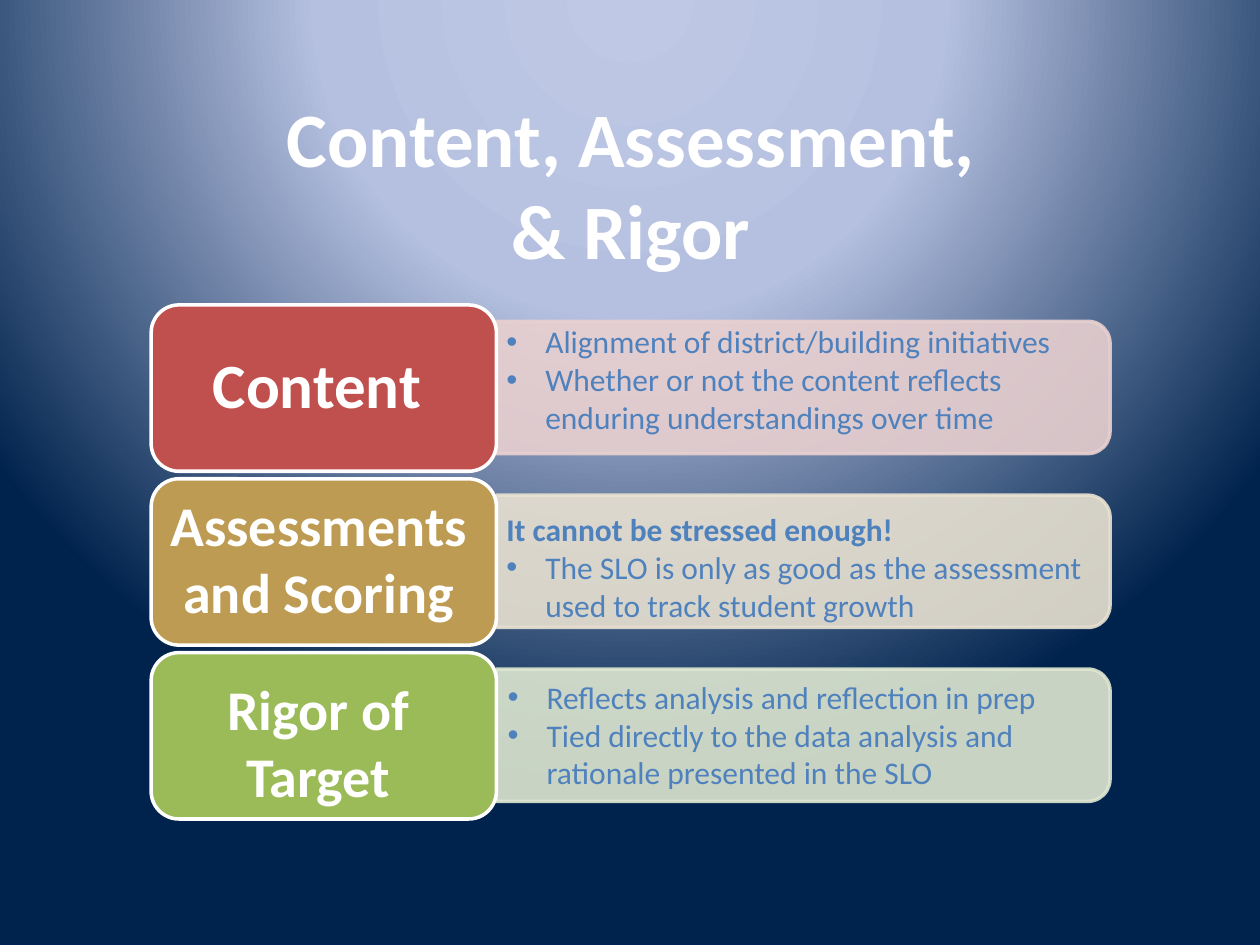
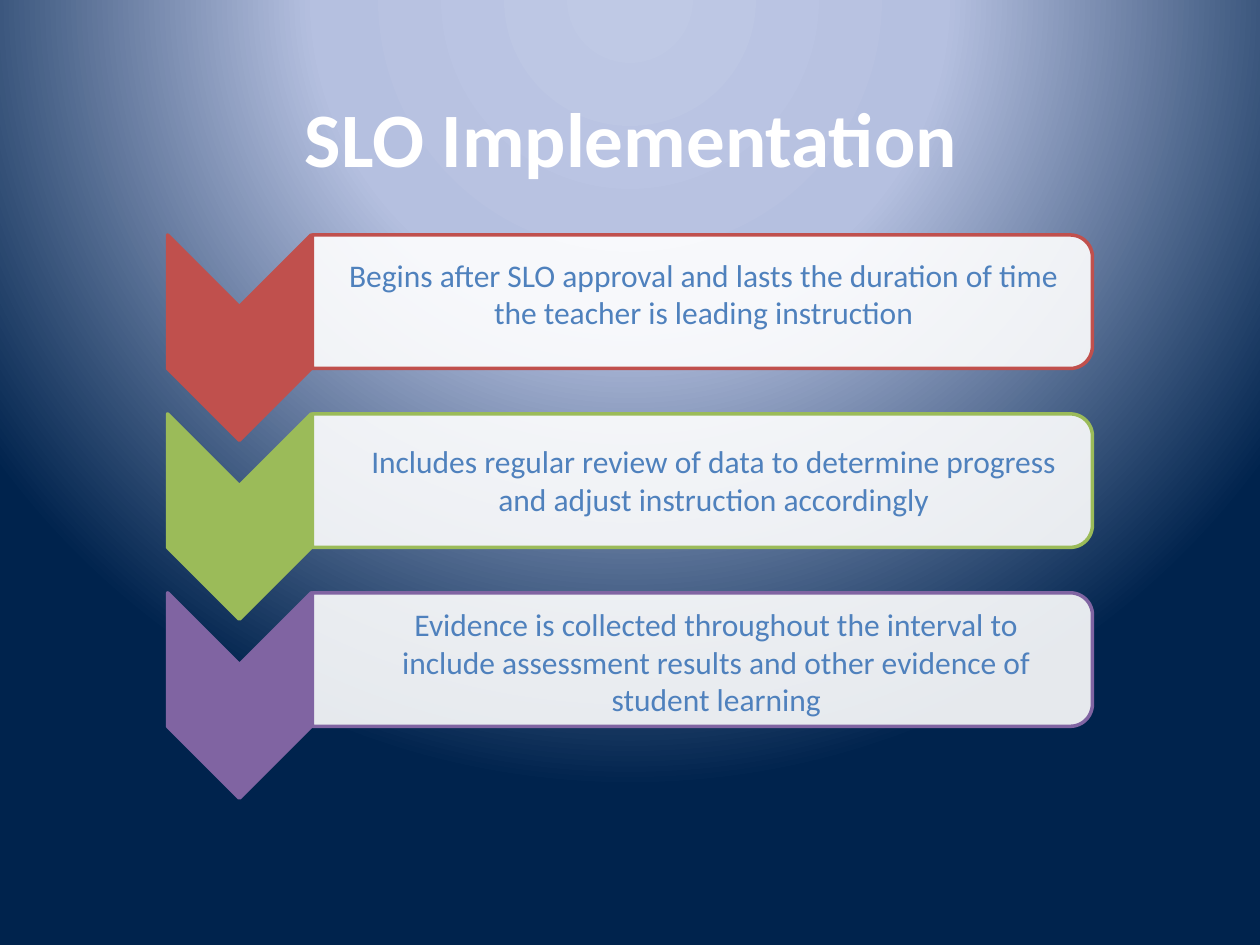
from pptx import Presentation
from pptx.dml.color import RGBColor
from pptx.enum.shapes import MSO_SHAPE
from pptx.enum.text import MSO_AUTO_SIZE, PP_ALIGN
from pptx.oxml import parse_xml
from pptx.oxml.ns import nsdecls, qn
from pptx.util import Inches, Pt

WHITE = RGBColor(0xFF, 0xFF, 0xFF)
BLUE = RGBColor(0x4F, 0x81, 0xBD)
RED = RGBColor(0xC0, 0x50, 0x4D)
GOLD = RGBColor(0xBD, 0x9B, 0x53)
GREEN = RGBColor(0x9B, 0xBB, 0x59)
PURPLE = RGBColor(0x80, 0x64, 0xA2)
PALE_RED = RGBColor(0xE8, 0xD0, 0xD0)
PALE_GOLD = RGBColor(0xE8, 0xE1, 0xD1)
PALE_GREEN = RGBColor(0xDE, 0xE7, 0xD1)
GLOW = RGBColor(0xBF, 0xC9, 0xE5)
HAZE = RGBColor(0xB5, 0xC0, 0xE0)
NAVY = RGBColor(0x00, 0x23, 0x4D)

TITLE = {"size": Pt(44), "bold": True, "color": WHITE}
LABEL = {"size": Pt(32), "bold": True, "color": WHITE}
BIG_LABEL = {**LABEL, "size": Pt(36)}
BODY = {"size": Pt(18), "bold": False, "color": BLUE}
BODY_BOLD = {**BODY, "bold": True}


class SlideBuilder:
    """Holds the shared style and the slide being filled."""

    font_name = "Calibri"
    bullet_indent = Inches(0.31)

    def __init__(self):
        self.deck = Presentation()
        self.deck.slide_width, self.deck.slide_height = Inches(10), Inches(7.5)
        self.page = None
        self.set_background()

    def set_background(self):
        """Put the radial glow on the master, for every slide."""
        master = self.deck.slide_master
        master.background.fill.solid()
        properties = next(master.element.iter(qn("p:bgPr")))
        stops = "".join(
            f'<a:gs pos="{place * 1000}"><a:srgbClr val="{color}"/></a:gs>'
            for place, color in ((0, GLOW), (40, HAZE), (100, NAVY)))
        gradient = parse_xml(
            f'<a:gradFill {nsdecls("a")} rotWithShape="1"><a:gsLst>{stops}</a:gsLst>'
            '<a:path path="circle"><a:fillToRect l="50000" t="-80000" r="50000" b="180000"/>'
            '</a:path></a:gradFill>')
        properties.replace(properties[0], gradient)

    def start(self, *title_lines):
        """Open a blank slide with its title."""
        self.page = self.deck.slides.add_slide(self.deck.slide_layouts[6])
        self.text(1.2, 0.67, 7.62, 1.32, title_lines, TITLE, grow=False)

    def text(self, left, top, width, height, lines, style,
             align=PP_ALIGN.CENTER, bullets=False, wrap=True, grow=True):
        """Add a text box; a line may be a (text, style) pair, which has no bullet."""
        box = self.page.shapes.add_textbox(*map(Inches, (left, top, width, height)))
        frame = box.text_frame
        frame.word_wrap = wrap
        frame.auto_size = MSO_AUTO_SIZE.SHAPE_TO_FIT_TEXT if grow else MSO_AUTO_SIZE.NONE
        for number, line in enumerate(lines):
            para = frame.paragraphs[0] if number == 0 else frame.add_paragraph()
            para.alignment = align
            plain = isinstance(line, str)
            words, look = (line, style) if plain else line
            self.format(para.add_run(), words, look)
            if bullets and plain:
                self.bullet(para)

    def format(self, span, words, style):
        span.text = words
        span.font.name = self.font_name
        for name, value in style.items():
            if name == "color":
                span.font.color.rgb = value
            else:
                setattr(span.font, name, value)

    def bullet(self, para):
        settings = para._p.get_or_add_pPr()
        settings.set("marL", str(self.bullet_indent))
        settings.set("indent", str(-self.bullet_indent))
        for tag in ('<a:buFont {} typeface="Arial"/>', '<a:buChar {} char="•"/>'):
            settings.append(parse_xml(tag.format(nsdecls("a"))))

    def shape(self, kind, left, top, width, height, fill, line,
              turned=False, fill_alpha=100, line_alpha=100):
        """Add a shape by its visible frame, turned a quarter if asked."""
        if turned:
            left, top = left + (width - height) / 2, top + (height - width) / 2
            width, height = height, width
        shape = self.page.shapes.add_shape(kind, *map(Inches, (left, top, width, height)))
        shape.rotation = 90 if turned else 0
        shape.shadow.inherit = False
        shape.fill.solid()
        shape.fill.fore_color.rgb = fill
        shape.line.color.rgb = line
        shape.line.width = Pt(2)
        colors = shape.element.spPr.iter(qn("a:srgbClr"))
        for color, alpha in zip(colors, (fill_alpha, line_alpha)):
            if alpha < 100:
                color.append(parse_xml(f'<a:alpha {nsdecls("a")} val="{alpha * 1000}"/>'))

    def bar(self, left, top, width, height, fill, line, line_alpha=100):
        """Add a translucent bar with round corners on its right."""
        self.shape(MSO_SHAPE.ROUND_2_SAME_RECTANGLE, left, top, width, height,
                   fill, line, turned=True, fill_alpha=90, line_alpha=line_alpha)


def build_rigor(builder):
    builder.start("Content, Assessment,", "& Rigor")
    # Tile and bar colours, label frame and text, bar text frame and lines
    rows = [
        (RED, PALE_RED, (1.59, 2.69, 1.87, 1.31), "Content", BIG_LABEL, (3.92, 2.51),
         ["Alignment of district/building initiatives",
          "Whether or not the content reflects enduring understandings over time"]),
        (GOLD, PALE_GOLD, (1.13, 3.84, 2.8, 1.72), "Assessments and Scoring", LABEL, (3.92, 4),
         [("It cannot be stressed enough!", BODY_BOLD),
          "The SLO is only as good as the assessment used to track student growth"]),
        (GREEN, PALE_GREEN, (1.13, 5.3, 2.79, 1.72), "Rigor of Target", LABEL, (3.93, 5.33),
         ["Reflects analysis and reflection in prep",
          "Tied directly to the data analysis and rationale presented in the SLO"]),
    ]
    for number, (color, pale, frame, label, style, corner, lines) in enumerate(rows):
        top = 2.42 + 1.38 * number
        builder.bar(3.94, top + 0.13, 4.87, 1.05, pale, pale, line_alpha=90)
        builder.shape(MSO_SHAPE.ROUNDED_RECTANGLE, 1.2, top, 2.74, 1.32, color, WHITE)
        builder.text(*corner, 4.9, 1.01, lines, BODY, align=PP_ALIGN.LEFT, bullets=True)
        builder.text(*frame, [label], style, wrap=style is LABEL,
                     align=PP_ALIGN.CENTER if style is LABEL else PP_ALIGN.LEFT)


def build_implementation(builder):
    builder.start("SLO Implementation")
    # Step colour, text frame and wording
    steps = [
        (RED, (2.67, 1.98, 5.83, 0.71),
         "Begins after SLO approval and lasts the duration of time "
         "the teacher is leading instruction"),
        (GREEN, (2.83, 3.46, 5.67, 0.71),
         "Includes regular review of data to determine progress "
         "and adjust instruction accordingly"),
        (PURPLE, (2.85, 4.75, 5.67, 1.01),
         "Evidence is collected throughout the interval to include "
         "assessment results and other evidence of student learning"),
    ]
    for number, (color, frame, words) in enumerate(steps):
        top = 1.865 + 1.42 * number
        builder.shape(MSO_SHAPE.CHEVRON, 1.33, top, 1.14, 1.63, color, color, turned=True)
        builder.bar(2.48, top, 6.19, 1.06, WHITE, color)
        builder.text(*frame, [words], BODY)


def main():
    builder = SlideBuilder()
    build_rigor(builder)
    build_implementation(builder)
    builder.deck.save("out.pptx")


if __name__ == "__main__":
    main()
